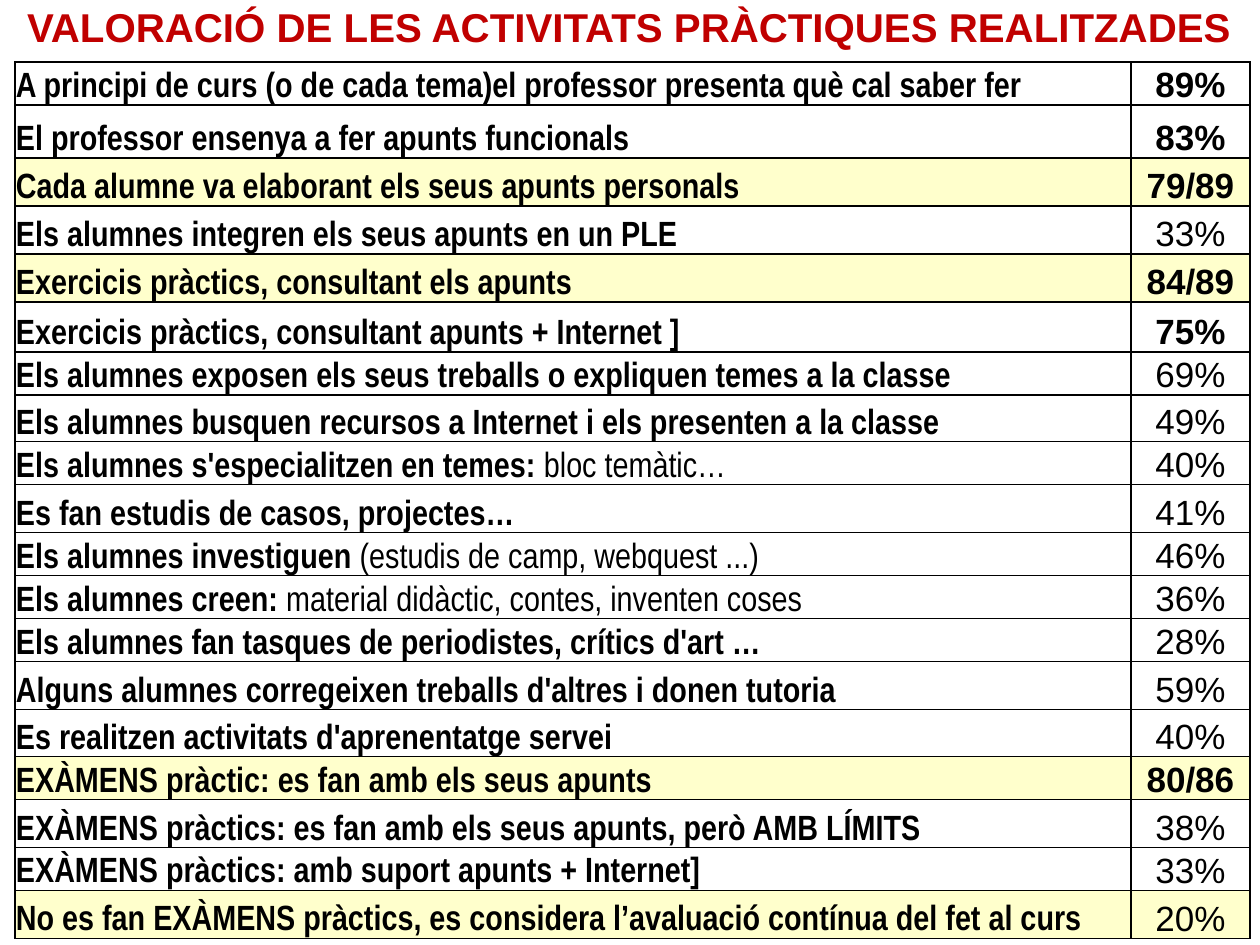
"""Builds a slide with a table rating the practical activities carried out in class."""
import pptx
import pptx.dml.color
import pptx.enum.text
import pptx.oxml
import pptx.oxml.ns
import pptx.util

RGBColor = pptx.dml.color.RGBColor
BLACK = RGBColor(0x00, 0x00, 0x00)
WHITE = RGBColor(0xFF, 0xFF, 0xFF)
RED = RGBColor(0xC0, 0x00, 0x00)
YELLOW = RGBColor(0xFF, 0xFF, 0xCC)

PX = pptx.util.Inches(1) / 126
TITLE_BOX = (0, -4, 1260, 103)
TABLE_LEFT, TABLE_TOP = 15, 62
COLUMNS = (1116, 119)
TITLE = "VALORACIÓ DE LES ACTIVITATS PRÀCTIQUES REALITZADES"

# Each row: height, fill, bold text, regular text, value, value is bold
ROWS = [
    (43, WHITE, "A principi de curs (o de cada tema)el professor presenta què cal saber fer", "", "89%", True),
    (53, WHITE, "El professor ensenya a fer apunts funcionals", "", "83%", True),
    (48, YELLOW, "Cada alumne va elaborant els seus apunts personals", "", "79/89", True),
    (48, WHITE, "Els alumnes integren els seus apunts en un PLE", "", "33%", False),
    (48, YELLOW, "Exercicis pràctics, consultant els apunts", "", "84/89", True),
    (50, WHITE, "Exercicis pràctics, consultant apunts + Internet ]", "", "75%", True),
    (43, WHITE, "Els alumnes exposen els seus treballs o expliquen temes a la classe", "", "69%", False),
    (47, WHITE, "Els alumnes busquen recursos a Internet i els presenten a la classe", "", "49%", False),
    (43, WHITE, "Els alumnes s'especialitzen en temes: ", "bloc temàtic…", "40%", False),
    (48, WHITE, "Es fan estudis de casos, projectes…", "", "41%", False),
    (43, WHITE, "Els alumnes investiguen", " (estudis de camp, webquest ...)", "46%", False),
    (43, WHITE, "Els alumnes creen: ", "material didàctic, contes, inventen coses", "36%", False),
    (43, WHITE, "Els alumnes fan tasques de periodistes, crítics d'art …", "", "28%", False),
    (48, WHITE, "Alguns alumnes corregeixen treballs d'altres i donen tutoria", "", "59%", False),
    (47, WHITE, "Es realitzen activitats d'aprenentatge servei", "", "40%", False),
    (43, YELLOW, "EXÀMENS pràctic: es fan amb els seus apunts", "", "80/86", True),
    (48, WHITE, "EXÀMENS pràctics: es fan amb els seus apunts, però AMB LÍMITS", "", "38%", False),
    (43, WHITE, "EXÀMENS pràctics: amb suport apunts + Internet]", "", "33%", False),
    (48, YELLOW, "No es fan EXÀMENS pràctics, es considera l’avaluació contínua del fet al curs", "", "20%", False),
]


def px(n):
    return pptx.util.Emu(round(n * PX))


def add_run(p, text, font, size, color, bold):
    r = p.add_run()
    r.text = text
    r.font.name = font
    r.font.size = pptx.util.Pt(size)
    r.font.color.rgb = color
    r.font.bold = bold


def add_borders(cell):
    tc_pr = cell._tc.get_or_add_tcPr()
    for side in "LRTB":
        tc_pr.append(pptx.oxml.parse_xml(
            f'<a:ln{side} {pptx.oxml.ns.nsdecls("a")} w="{pptx.util.Pt(1)}">'
            f'<a:solidFill><a:srgbClr val="{BLACK}"/></a:solidFill></a:ln{side}>'))


def fill_cell(cell, fill, font, align, runs):
    add_borders(cell)
    cell.fill.solid()
    cell.fill.fore_color.rgb = fill
    cell.margin_left = cell.margin_right = cell.margin_top = px(1)
    cell.margin_bottom = 0
    cell.vertical_anchor = pptx.enum.text.MSO_ANCHOR.BOTTOM
    p = cell.text_frame.paragraphs[0]
    p.alignment = align
    for text, bold in runs:
        if text:
            add_run(p, text, font, 20, BLACK, bold)


def add_title(s):
    sp = s.shapes.title
    sp.left, sp.top, sp.width, sp.height = map(px, TITLE_BOX)
    tf = sp.text_frame
    tf.word_wrap = True
    tf.auto_size = pptx.enum.text.MSO_AUTO_SIZE.NONE
    tf.vertical_anchor = pptx.enum.text.MSO_ANCHOR.TOP
    p = tf.paragraphs[0]
    p.alignment = pptx.enum.text.PP_ALIGN.CENTER
    add_run(p, TITLE, "Arial", 23, RED, True)


def add_ratings(s):
    height = sum(row[0] for row in ROWS)
    box = map(px, (TABLE_LEFT, TABLE_TOP, sum(COLUMNS), height))
    table = s.shapes.add_table(len(ROWS), len(COLUMNS), *box).table
    table.first_row = table.horz_banding = False
    for column, width in zip(table.columns, COLUMNS):
        column.width = px(width)
    align = pptx.enum.text.PP_ALIGN
    for i, (height, fill, strong, plain, value, bold) in enumerate(ROWS):
        table.rows[i].height = px(height)
        fill_cell(table.cell(i, 0), fill, "Arial Narrow", align.LEFT, [(strong, True), (plain, False)])
        fill_cell(table.cell(i, 1), fill, "Arial", align.CENTER, [(value, bold)])


def main():
    prs = pptx.Presentation()
    prs.slide_width, prs.slide_height = px(1260), px(945)
    s = prs.slides.add_slide(prs.slide_layouts[5])
    add_title(s)
    add_ratings(s)
    prs.save("out.pptx")


if __name__ == "__main__":
    main()
